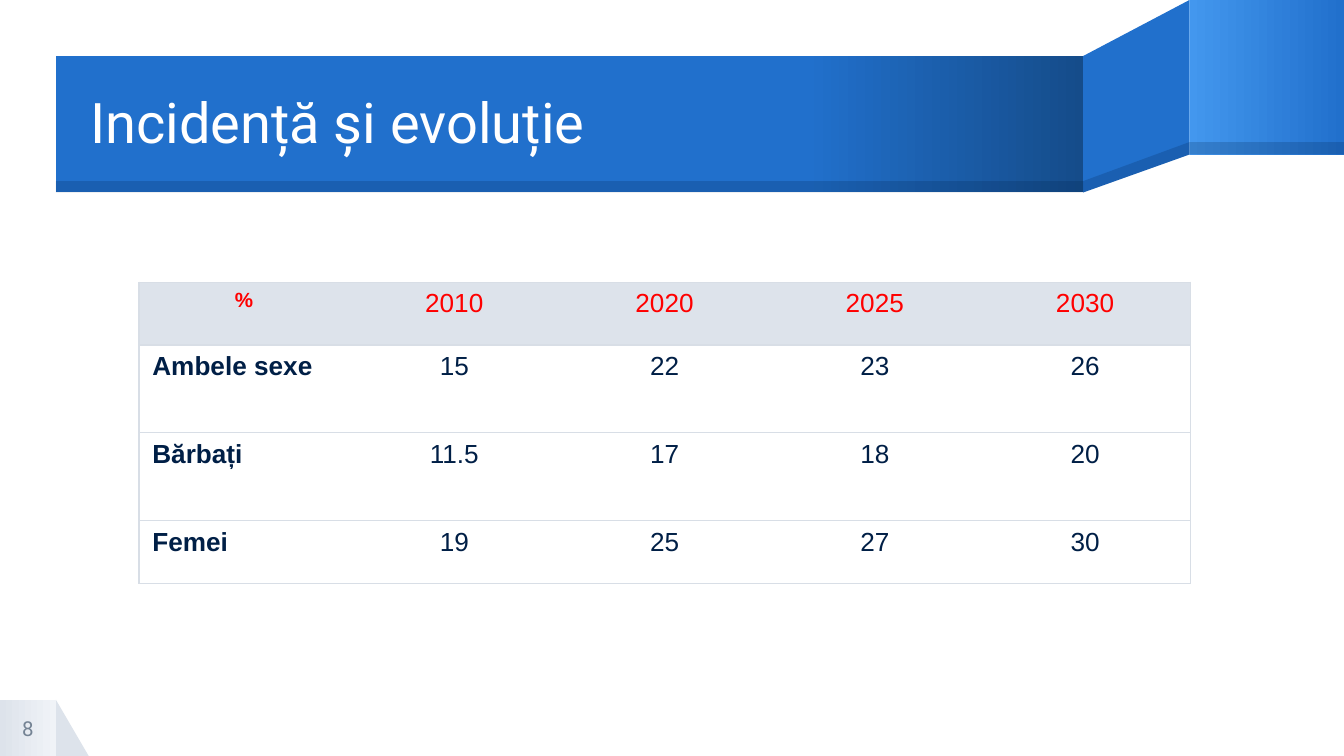
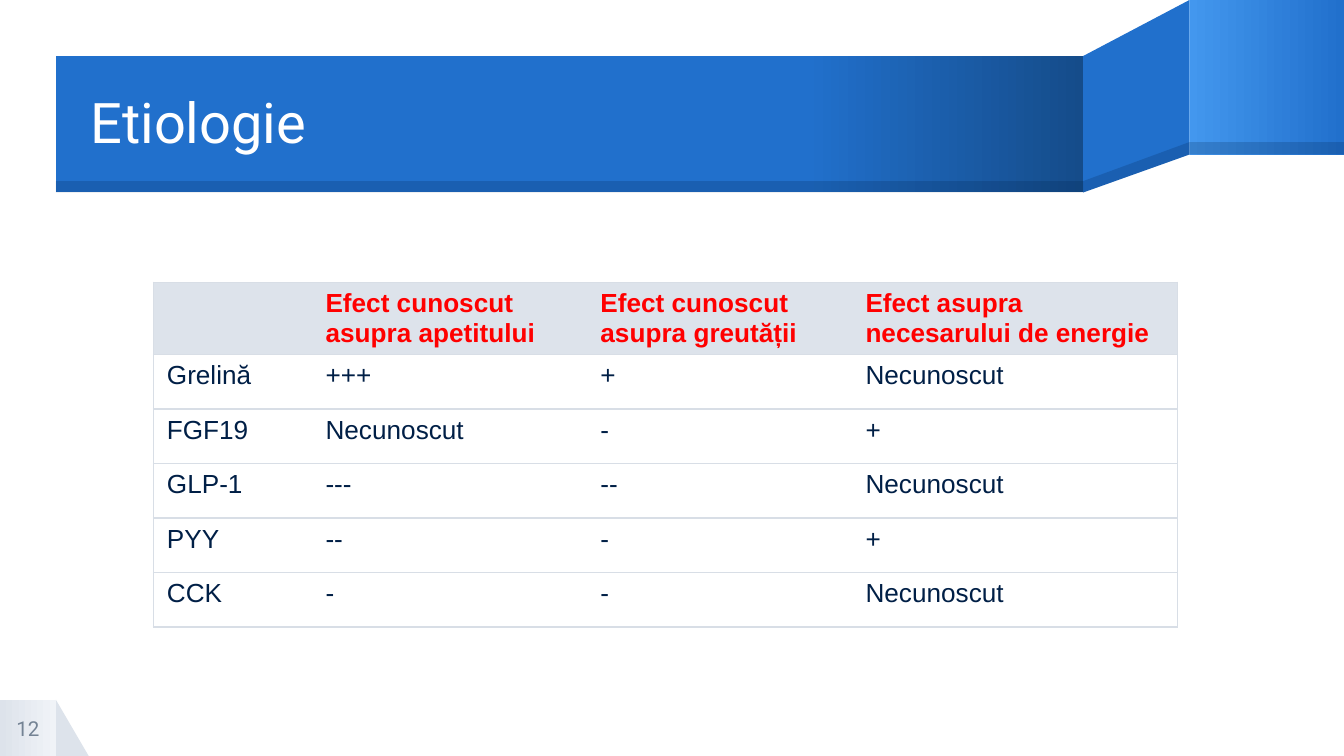
from collections import namedtuple

from lxml.etree import SubElement
from pptx import Presentation
from pptx.dml.color import RGBColor
from pptx.enum.shapes import MSO_SHAPE as Preset
from pptx.enum.text import MSO_ANCHOR as Anchor, MSO_AUTO_SIZE as AutoSize, PP_ALIGN as Align
from pptx.oxml.ns import qn
from pptx.util import Pt

WHITE = RGBColor(0xFF, 0xFF, 0xFF)
BLUE = RGBColor(0x21, 0x70, 0xCC)
LIGHT_BLUE = RGBColor(0x43, 0x97, 0xEE)
DARK_BLUE = RGBColor(0x15, 0x4C, 0x8A)
NAVY = RGBColor(0x00, 0x1F, 0x46)
RED = RGBColor(0xFF, 0x00, 0x00)
PALE_GREY = RGBColor(0xDD, 0xE3, 0xEB)
NEAR_WHITE = RGBColor(0xF0, 0xF3, 0xF7)
NUMBER_GREY = RGBColor(0x74, 0x83, 0x94)
BORDER_GREY = RGBColor(0xD8, 0xDE, 0xE6)

HEADING_FONT = "Roboto"
TABLE_FONT = "Arial"
BORDER_WIDTH = 0.75

Box = namedtuple("Box", "left top width height")
SLIDE = Box(0, 0, 720, 405)
RIBBON = Box(30, 0, 690, 103.1)
PAGE_CORNER = Box(0, 375, 30, 30)


def in_points(box):
    return [Pt(length) for length in box]


def write(frame, text, *, size, color, font=TABLE_FONT, bold=False, align=Align.LEFT, spacing=None):
    frame.text = text
    paragraph = frame.paragraphs[0]
    paragraph.alignment = align
    paragraph.line_spacing = spacing
    paragraph.font.size = Pt(size)
    paragraph.font.name = font
    paragraph.font.bold = bold
    paragraph.font.color.rgb = color


def center_without_insets(frame):
    frame.margin_left = frame.margin_top = frame.margin_right = frame.margin_bottom = 0
    frame.vertical_anchor = Anchor.MIDDLE
    frame.auto_size = AutoSize.NONE
    frame.word_wrap = True


def paint(shape, color, opacity=None):
    """Fill a shape without outline; opacity is a percentage."""
    shape.shadow.inherit = False
    shape.line.fill.background()
    shape.fill.solid()
    shape.fill.fore_color.rgb = color
    if opacity is not None:
        color_element = next(shape.element.iter(qn("a:srgbClr")))
        SubElement(color_element, qn("a:alpha"), val=str(opacity * 1000))


def paint_gradient(shape, start_color, end_color, start=0):
    """Blend two colours from left to right, beginning at the fraction start."""
    paint(shape, start_color)
    shape.fill.gradient()
    shape.fill.gradient_angle = 0
    stops = shape.fill.gradient_stops
    for stop, color, position in zip(stops, (start_color, end_color), (start, 1)):
        stop.color.rgb = color
        stop.position = position


def add_preset(slide, box, preset=Preset.RECTANGLE):
    return slide.shapes.add_shape(preset, *in_points(box))


def add_polygon(slide, points):
    first, *others = [(Pt(x), Pt(y)) for x, y in points]
    builder = slide.shapes.build_freeform(*first, scale=1.0)
    builder.add_line_segments(others, close=True)
    return builder.convert_to_shape()


def add_ribbon(slide, box):
    """Front band, slanted fold and back band, each with a shaded lower edge."""
    fold_left, fold_right = box.left + 550.3, box.left + 607.2
    right = box.left + box.width
    front_top, front_bottom = box.top + 30, box.top + box.height
    front_shade, back_shade, back_bottom = box.top + 97, box.top + 76.1, box.top + 82.8

    fold = add_polygon(slide, [(fold_right, box.top), (fold_left, front_top),
                               (fold_left, front_bottom), (fold_right, back_bottom)])
    paint(fold, BLUE)
    back = add_preset(slide, Box(fold_right, box.top, right - fold_right, back_bottom - box.top))
    paint_gradient(back, LIGHT_BLUE, BLUE)
    front = add_preset(slide, Box(box.left, front_top, fold_left - box.left, front_bottom - front_top))
    paint_gradient(front, BLUE, DARK_BLUE, start=0.73)

    shades = [
        add_polygon(slide, [(fold_right, back_shade), (fold_left, front_shade),
                            (fold_left, front_bottom), (fold_right, back_bottom)]),
        add_preset(slide, Box(fold_right, back_shade, right - fold_right, back_bottom - back_shade)),
        add_preset(slide, Box(box.left, front_shade, fold_left - box.left, front_bottom - front_shade)),
    ]
    for shade in shades:
        paint(shade, NAVY, opacity=20)


def add_title(slide, text, box):
    """Place the title on the front band of the ribbon."""
    title = slide.shapes.title
    slide.shapes.element.append(title.element)
    title.left, title.top, title.width, title.height = in_points(
        Box(box.left + 18.4, box.top + 30.7, 532, 72.7))
    center_without_insets(title.text_frame)
    write(title.text_frame, text, size=30, color=WHITE, font=HEADING_FONT, spacing=0.9)


def add_page_number(slide, number, box):
    fold = add_preset(slide, Box(box.left + box.width, box.top, 17.5, box.height), Preset.RIGHT_TRIANGLE)
    paint(fold, PALE_GREY)
    paint_gradient(add_preset(slide, box), PALE_GREY, NEAR_WHITE)
    label = slide.shapes.add_textbox(*in_points(box))
    center_without_insets(label.text_frame)
    write(label.text_frame, str(number), size=11, color=NUMBER_GREY, font=HEADING_FONT,
          align=Align.CENTER)


def set_borders(cell, visible_sides):
    """Draw the named sides (L, R, T, B) and clear the others."""
    properties = cell._tc.get_or_add_tcPr()
    for side in "LRTB":
        line = SubElement(properties, qn(f"a:ln{side}"), w=str(Pt(BORDER_WIDTH)))
        if side in visible_sides:
            fill = SubElement(line, qn("a:solidFill"))
            SubElement(fill, qn("a:srgbClr"), val=str(BORDER_GREY))
        else:
            SubElement(line, qn("a:noFill"))


def add_data_table(slide, rows, left, top, widths, heights, format_cell):
    """Build a table; format_cell(row, column) gives the text format of a cell."""
    box = Box(left, top, sum(widths), sum(heights))
    table = slide.shapes.add_table(len(rows), len(widths), *in_points(box)).table
    table.first_row = table.horz_banding = False
    for column, width in zip(table.columns, widths):
        column.width = Pt(width)
    for row, height in zip(table.rows, heights):
        row.height = Pt(height)

    last_column = len(widths) - 1
    for row_index, values in enumerate(rows):
        for column_index, value in enumerate(values):
            cell = table.cell(row_index, column_index)
            sides = "TB" + "L" * (column_index == 0) + "R" * (column_index == last_column)
            set_borders(cell, sides)
            if row_index == 0:
                cell.fill.solid()
                cell.fill.fore_color.rgb = PALE_GREY
            else:
                cell.fill.background()
            write(cell.text_frame, value, **format_cell(row_index, column_index))


def incidence_format(row, column):
    is_corner = row == column == 0
    is_row_name = row > 0 and column == 0
    return {
        "size": 11 if is_corner else 14,
        "color": NAVY if row else RED,
        "bold": column == 0,
        "align": Align.LEFT if is_row_name else Align.CENTER,
    }


def etiology_format(row, column):
    return {"size": 14, "color": NAVY if row else RED, "bold": row == 0}


def add_ribbon_slide(presentation, title, number):
    slide = presentation.slides.add_slide(presentation.slide_layouts[5])
    add_ribbon(slide, RIBBON)
    add_title(slide, title, RIBBON)
    add_page_number(slide, number, PAGE_CORNER)
    return slide


def add_incidence_slide(presentation):
    slide = add_ribbon_slide(presentation, "Incidență și evoluție", 8)
    rows = [
        ("%", "2010", "2020", "2025", "2030"),
        ("Ambele sexe", "15", "22", "23", "26"),
        ("Bărbați", "11.5", "17", "18", "20"),
        ("Femei", "19", "25", "27", "30"),
    ]
    add_data_table(slide, rows, left=74.4, top=151.2, widths=[112.65] * 5,
                   heights=[33.7, 47, 47, 33.7], format_cell=incidence_format)


def add_etiology_slide(presentation):
    slide = add_ribbon_slide(presentation, "Etiologie", 12)
    rows = [
        ("", "Efect cunoscut asupra apetitului", "Efect cunoscut asupra greutății",
         "Efect asupra necesarului de energie"),
        ("Grelină", "+++", "+", "Necunoscut"),
        ("FGF19", "Necunoscut", "-", "+"),
        ("GLP-1", "---", "--", "Necunoscut"),
        ("PYY", "--", "-", "+"),
        ("CCK", "-", "-", "Necunoscut"),
    ]
    add_data_table(slide, rows, left=82.2, top=151.2, widths=[85, 147.3, 142, 174.3],
                   heights=[29.2] * 6, format_cell=etiology_format)


def main():
    presentation = Presentation()
    presentation.slide_width, presentation.slide_height = Pt(SLIDE.width), Pt(SLIDE.height)
    add_incidence_slide(presentation)
    add_etiology_slide(presentation)
    presentation.save("out.pptx")


if __name__ == "__main__":
    main()
